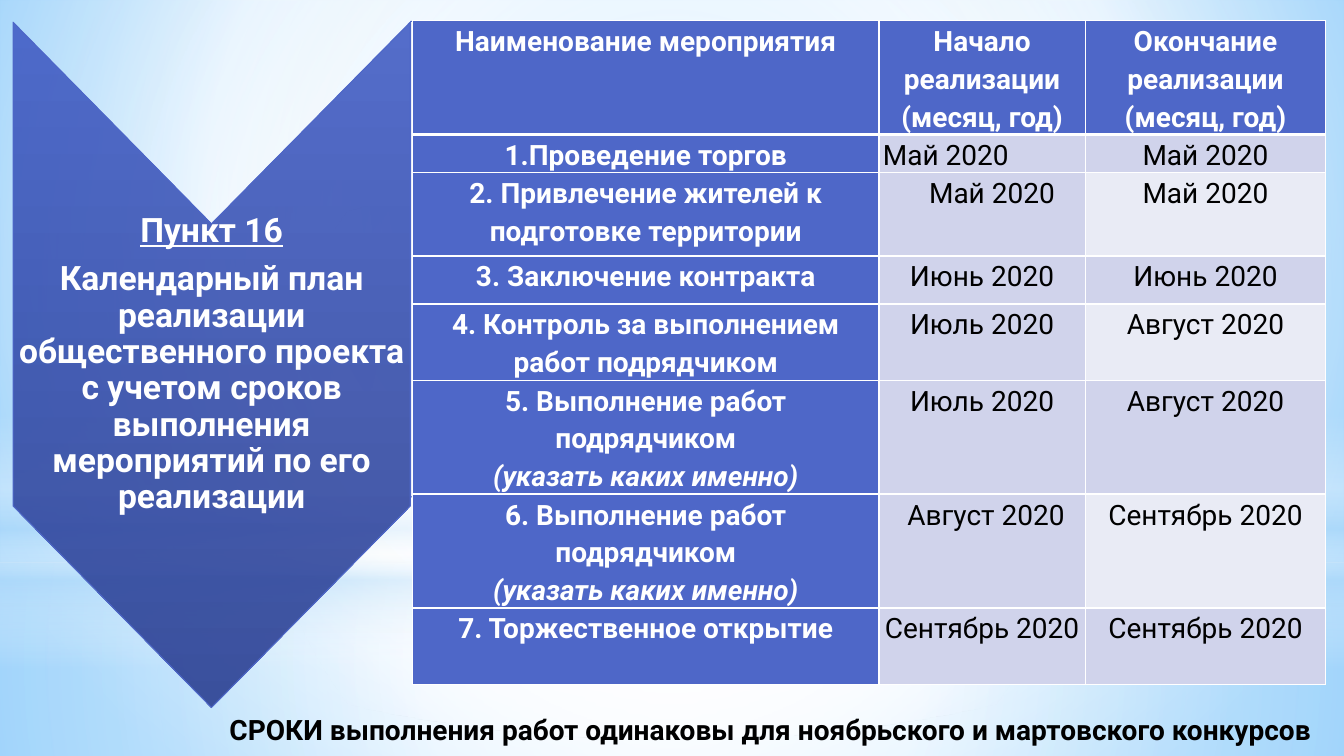
from lxml import etree
from pptx import Presentation
from pptx.dml.color import RGBColor
from pptx.enum.shapes import MSO_SHAPE as Preset
from pptx.enum.text import MSO_ANCHOR as Anchor, PP_ALIGN as Align
from pptx.oxml import parse_xml
from pptx.oxml.ns import nsdecls, qn
from pptx.util import Cm, Pt

COLORS = {
    "white": "FFFFFF", "black": "000000", "accent": "4E67C8",
    "arrow_top": "435EC5", "arrow_bottom": "2B4092",
    "sky": "9ED5FF", "deep_sky": "5BB9FF", "haze": "B4DCFA",
    "band": "D0D3EB", "light_band": "E9EBF5",
}
COLUMN_WIDTHS = [11.75, 5.2, 6.06]
ROW_HEIGHTS = [2.87, 0.96, 2.1, 1.21, 1.92, 2.87, 2.87, 1.92]
HEADER = ["Наименование мероприятия", "Начало реализации\n(месяц, год)",
          "Окончание реализации\n(месяц, год)"]
STEPS = [
    ("1.Проведение торгов", "Май 2020", "Май 2020"),
    ("2. Привлечение жителей к подготовке территории", "Май 2020", "Май 2020"),
    ("3. Заключение контракта", "Июнь 2020", "Июнь 2020"),
    ("4. Контроль за выполнением работ подрядчиком", "Июль 2020", "Август 2020"),
    ("5. Выполнение работ подрядчиком\n(указать каких именно)", "Июль 2020", "Август 2020"),
    ("6. Выполнение работ подрядчиком\n(указать каких именно)", "Август 2020", "Сентябрь 2020"),
    ("7. Торжественное открытие", "Сентябрь 2020", "Сентябрь 2020"),
]
START_INDENTS = {2: 0.5, 6: 0.2}
GLOW = "circle"


def rgb(name):
    return RGBColor.from_string(COLORS[name])


def set_all(target, values):
    for name, value in values.items():
        setattr(target, name, value)


def set_gradient(container, stops, focus=None):
    """Swap the solid fill for a vertical gradient, or a circular one around focus."""
    stop_xml = "".join(
        f'<a:gs pos="{position * 1000}"><a:srgbClr val="{COLORS[color]}">'
        f'<a:alpha val="{opacity * 1000}"/></a:srgbClr></a:gs>'
        for position, color, opacity in stops)
    direction = '<a:lin ang="5400000" scaled="0"/>'
    if focus:
        sides = " ".join(f'{side}="{value * 1000}"' for side, value in zip("ltrb", focus))
        direction = f'<a:path path="{GLOW}"><a:fillToRect {sides}/></a:path>'
    gradient = parse_xml(f'<a:gradFill {nsdecls("a")} rotWithShape="1">'
                         f'<a:gsLst>{stop_xml}</a:gsLst>{direction}</a:gradFill>')
    container.replace(container.find(qn("a:solidFill")), gradient)


def add_text(paragraph, text, color, **font):
    run = paragraph.add_run()
    run.text = text
    set_all(run.font, {"name": "Roboto", "size": Pt(20), "bold": True, **font})
    run.font.color.rgb = rgb(color)


def style_shape(shape, line=None):
    shape.shadow.inherit = False
    shape.fill.solid()
    shape.fill.fore_color.rgb = rgb("white")
    if line:
        shape.line.color.rgb = rgb(line)
        shape.line.width = Pt(0.75)
    else:
        shape.line.fill.background()


def add_backdrop(slide):
    slide.background.fill.solid()
    background = slide._element.find(".//" + qn("p:bgPr"))
    set_gradient(background, [(0, "sky", 100), (60, "white", 100), (100, "deep_sky", 100)],
                 (20, 10, 20, 60))
    center = (50, 50, 50, 50)
    layers = [
        (Preset.RECTANGLE, 14.17, 4.88, center,
         [(0, "white", 91), (37, "white", 76), (100, "haze", 79)]),
        (Preset.RECTANGLE, 0, 14.17, center,
         [(0, "white", 89), (48, "white", 62), (100, "haze", 79)]),
        (Preset.RECTANGLE, 10.46, 6.35, None,
         [(0, "white", 0), (29, "white", 30), (45, "haze", 40),
          (55, "white", 26), (65, "haze", 60), (100, "white", 0)]),
        (Preset.OVAL, 4.45, 14.17, center, [(0, "white", 100), (56, "white", 0)]),
    ]
    for preset, top, height, focus, stops in layers:
        layer = slide.shapes.add_shape(preset, 0, Cm(top), Cm(33.87), Cm(height))
        style_shape(layer)
        set_gradient(layer._element.spPr, stops, focus)


def add_arrow(slide):
    left, middle, right = 0.33, 5.33, 10.34
    points = [(right, 12.75), (middle, 17.83), (left, 12.75), (left, 0.56), (middle, 5.64)]
    builder = slide.shapes.build_freeform(Cm(right), Cm(0.56))
    builder.add_line_segments([(Cm(x), Cm(y)) for x, y in points], close=True)
    arrow = builder.convert_to_shape()
    style_shape(arrow, "accent")
    set_gradient(arrow._element.spPr, [(0, "arrow_top", 90), (100, "arrow_bottom", 90)])
    frame = arrow.text_frame
    set_all(frame, {"word_wrap": True, "vertical_anchor": Anchor.MIDDLE,
                    "margin_left": Cm(0.05), "margin_right": Cm(0.05),
                    "margin_top": Cm(4.62), "margin_bottom": Cm(4.62)})
    caption = ("Календарный план реализации общественного проекта "
               "с учетом сроков выполнения мероприятий по его реализации")
    for paragraph, text, underline in [(frame.paragraphs[0], "Пункт 16", True),
                                       (frame.add_paragraph(), caption, False)]:
        set_all(paragraph, {"alignment": Align.CENTER, "line_spacing": 0.9,
                            "space_after": Pt(8.4)})
        add_text(paragraph, text, "white", size=Pt(24), underline=underline)


def add_panel(slide):
    panel = slide.shapes.add_shape(Preset.ROUND_2_SAME_RECTANGLE,
                                   Cm(11.8), Cm(-0.91), Cm(11.98), Cm(14.88))
    panel.rotation = 90
    style_shape(panel, "accent")


def set_borders(cell, bottom_width):
    properties = cell._tc.get_or_add_tcPr()
    for index, side in enumerate("LRTB"):
        width = Pt(bottom_width if side == "B" else 1)
        border = parse_xml(f'<a:ln{side} {nsdecls("a")} w="{width}"><a:solidFill>'
                           f'<a:srgbClr val="{COLORS["white"]}"/></a:solidFill></a:ln{side}>')
        properties.insert(index, border)


def fill_cell(cell, text, row, column):
    heading = row == 0 or column == 0
    if heading:
        fill = "accent"
    else:
        fill = "light_band" if column == 2 and row in (2, 4, 6) else "band"
    cell.fill.solid()
    cell.fill.fore_color.rgb = rgb(fill)
    indent = START_INDENTS.get(row, 0) if column == 1 else 0
    set_all(cell, {"margin_left": Cm(0.1 + indent), "margin_right": Cm(0.1),
                   "margin_top": 0, "margin_bottom": 0})
    set_borders(cell, 3 if row == 0 else 1)
    frame = cell.text_frame
    for index, line in enumerate(text.split("\n")):
        paragraph = frame.add_paragraph() if index else frame.paragraphs[0]
        at_left = (row, column) == (1, 1)
        set_all(paragraph, {"alignment": Align.LEFT if at_left else Align.CENTER,
                            "line_spacing": 1.15})
        add_text(paragraph, line, "white" if heading else "black", bold=heading,
                 italic=line.startswith("(указать"))


def add_schedule(slide):
    rows = [HEADER, *STEPS]
    table = slide.shapes.add_table(len(rows), len(HEADER), Cm(10.4), Cm(0.52),
                                   Cm(sum(COLUMN_WIDTHS)), Cm(sum(ROW_HEIGHTS))).table
    for column, width in zip(table.columns, COLUMN_WIDTHS):
        column.width = Cm(width)
    for row, height in zip(table.rows, ROW_HEIGHTS):
        row.height = Cm(height)
    for row, texts in enumerate(rows):
        for column, text in enumerate(texts):
            fill_cell(table.cell(row, column), text, row, column)


def add_footer(slide):
    box = slide.shapes.add_textbox(Cm(4.93), Cm(17.83), Cm(28.37), Cm(1.11))
    box.text_frame.word_wrap = True
    paragraph = box.text_frame.paragraphs[0]
    paragraph.alignment = Align.RIGHT
    add_text(paragraph, "СРОКИ выполнения работ одинаковы для ноябрьского "
                        "и мартовского конкурсов", "black")


def main():
    presentation = Presentation()
    set_all(presentation, {"slide_width": Cm(33.87), "slide_height": Cm(19.05)})
    slide = presentation.slides.add_slide(presentation.slide_layouts[6])
    for add_part in (add_backdrop, add_arrow, add_panel, add_schedule, add_footer):
        add_part(slide)
    presentation.save("out.pptx")


if __name__ == "__main__":
    main()
